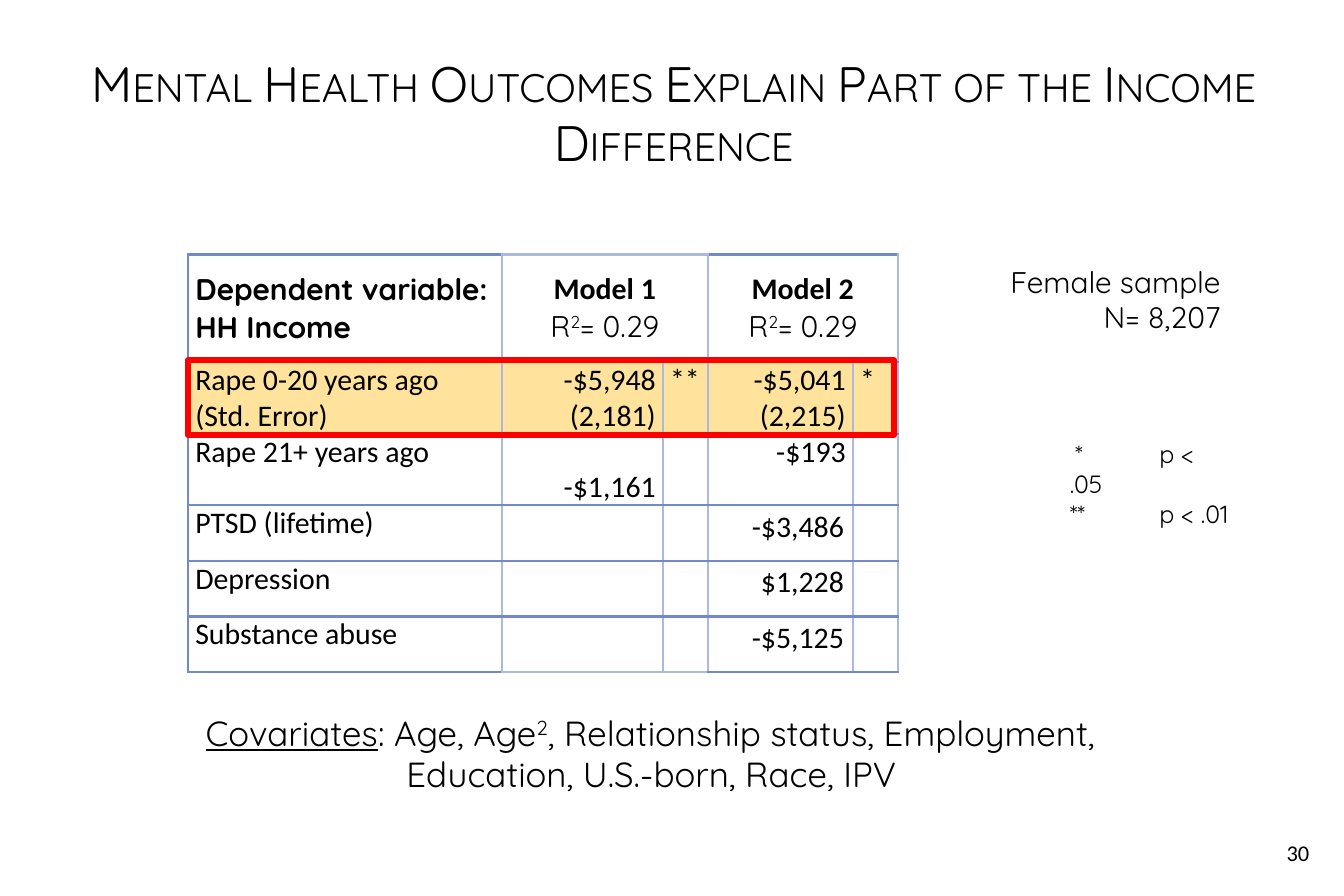
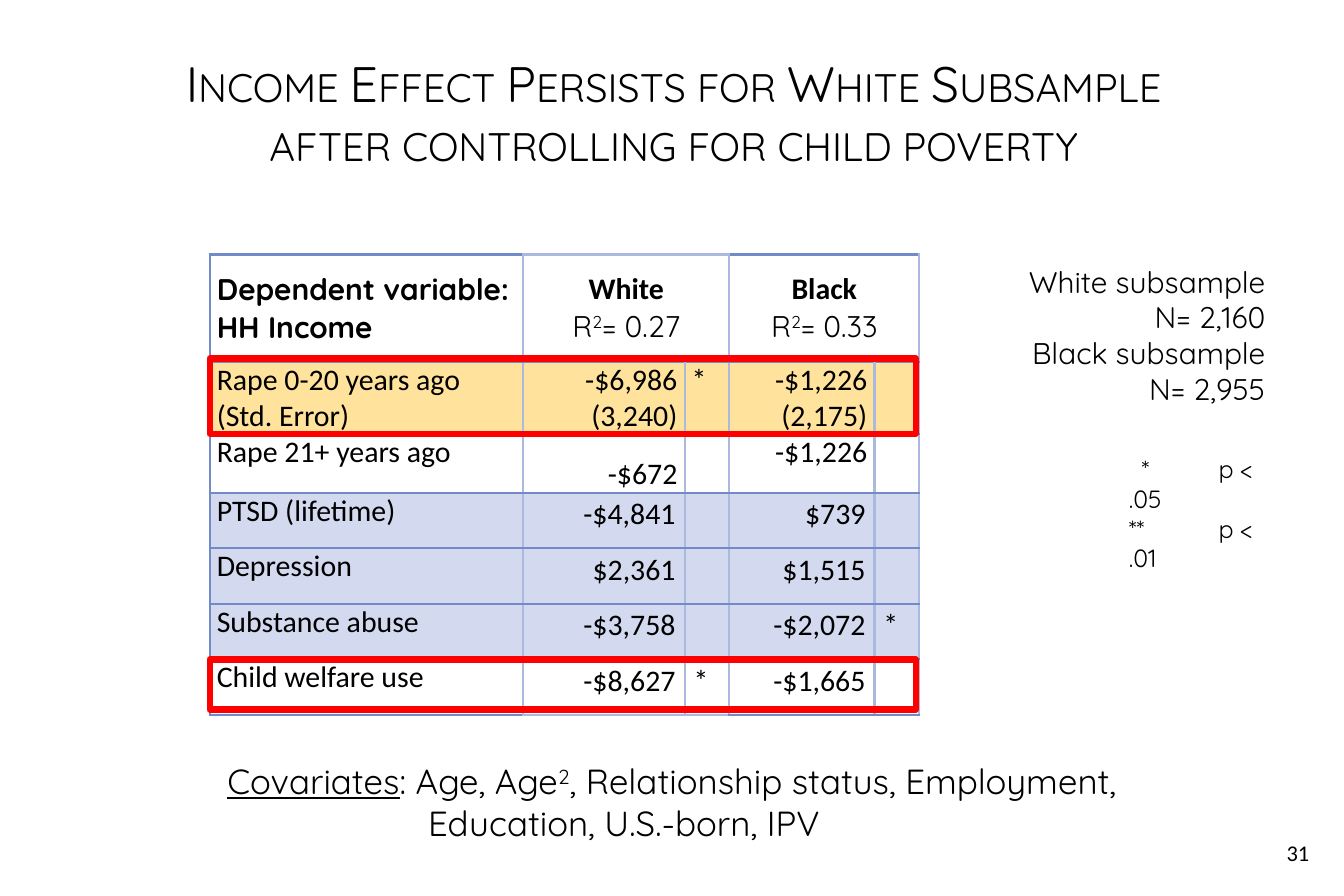
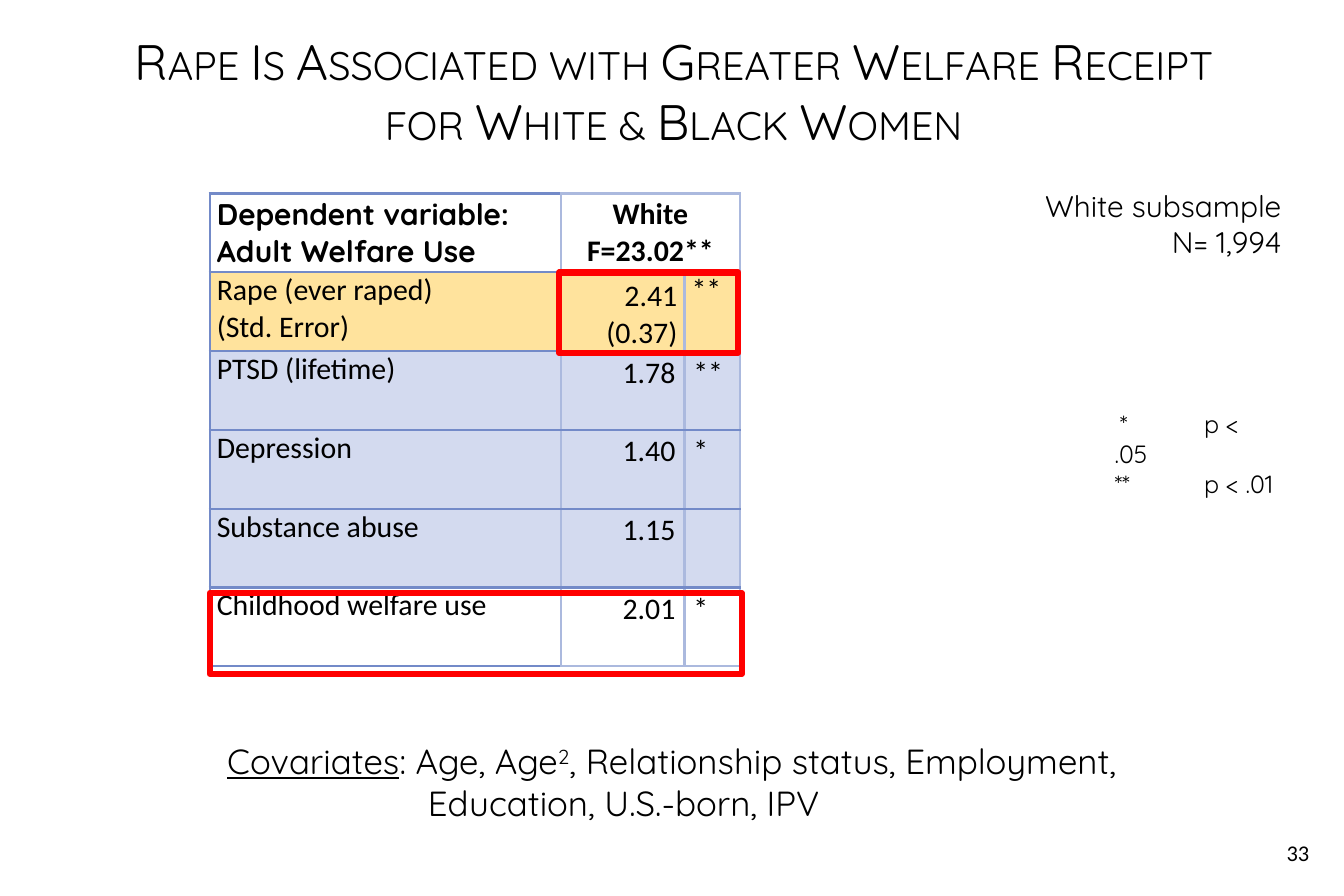
"""Builds three slides of regression tables on income and welfare outcomes."""
from collections.abc import Sequence
from dataclasses import dataclass

from lxml.etree import SubElement
from pptx import Presentation
from pptx.dml.color import RGBColor
from pptx.enum.shapes import MSO_SHAPE
from pptx.enum.text import MSO_ANCHOR, PP_ALIGN
from pptx.oxml.ns import qn
from pptx.util import Inches, Pt

COLORS = {
    "text": "000000",
    "rule": "738AC8",
    "light_rule": "ABB9DE",
    "key": "FFE39D",
    "band": "D3DAEF",
    "frame": "FF0000",
}
BODY, HEAD = "Calibri", "Quicksand"
TIGHT = (0.04, 0, 0.04, 0)
LOOSE = (0.05, 0.02, 0.05, 0.02)
SMALL = (0.05, 0.03, 0.05, 0.03)
WIDE = (0.1, 0.05, 0.1, 0.05)
FIVE_COLS = (1.75, 0.9, 0.25, 0.81, 0.25)
THREE_COLS = (1.96, 0.69, 0.31)
LEGEND = ("*\tp < .05", "**\tp < .01")


@dataclass(frozen=True)
class Run:
    text: str
    bold: bool | None = None
    underline: bool = False
    raised: bool = False
    font: str | None = None


Line = str | tuple[Run, ...]


@dataclass(frozen=True)
class Box:
    left: float
    top: float
    width: float
    height: float

    def emu(self) -> tuple[int, ...]:
        return tuple(Inches(v) for v in (self.left, self.top, self.width, self.height))


@dataclass(frozen=True)
class Row:
    height: float
    label: tuple[str, ...]
    values: tuple[tuple[str, ...], ...]
    fill: str | None = None
    margins: tuple[float, ...] = LOOSE
    low: bool = False


@dataclass(frozen=True)
class Page:
    number: str
    title: str
    title_box: Box
    outcome: str
    models: tuple[tuple[Line, ...], ...]
    table: Box
    cols: tuple[float, ...]
    head_height: float
    rows: tuple[Row, ...]
    frames: tuple[Box, ...]
    covariates: str
    covariates_box: Box
    sample: tuple[str, ...]
    sample_box: Box
    legend_box: Box
    legend_tabs: tuple[tuple[float, float], ...] = ((0.03, 0.19), (0, 0.19))


def rgb(name: str) -> RGBColor:
    return RGBColor.from_string(COLORS[name])


def write(tf, lines: Sequence[Line], *, size: float = 12, font: str = HEAD,
          bold: bool = False, caps: bool = False, align=PP_ALIGN.LEFT,
          hanging: float = 0, tabs: Sequence[tuple[float, float]] = ()) -> None:
    for i, line in enumerate(lines):
        p = tf.paragraphs[0] if i == 0 else tf.add_paragraph()
        p.alignment = align
        pPr = p._p.get_or_add_pPr()
        if hanging:
            pPr.set("marL", str(Inches(hanging)))
            pPr.set("indent", str(-Inches(hanging)))
        if tabs:
            indent, stop = tabs[i]
            pPr.set("marL", "0")
            pPr.set("indent", str(Inches(indent)))
            tab_list = SubElement(pPr, qn("a:tabLst"))
            SubElement(tab_list, qn("a:tab"), pos=str(Inches(stop)), algn="l")
        for run in (Run(line),) if isinstance(line, str) else line:
            for j, part in enumerate(run.text.split("\n")):
                if j:
                    p.add_line_break()
                r = p.add_run()
                r.text = part
                r.font.size = Pt(size)
                r.font.name = run.font or font
                r.font.bold = bold if run.bold is None else run.bold
                r.font.underline = run.underline
                r.font.color.rgb = rgb("text")
                rPr = r._r.get_or_add_rPr()
                if caps:
                    rPr.set("cap", "small")
                if run.raised:
                    rPr.set("baseline", "30000")


def add_text(s, box: Box, lines: Sequence[Line], *, margins: Sequence[float] = SMALL,
             anchor=MSO_ANCHOR.TOP, wrap: bool = True, **style) -> None:
    tf = s.shapes.add_textbox(*box.emu()).text_frame
    tf.word_wrap = wrap
    tf.vertical_anchor = anchor
    tf.margin_left, tf.margin_top, tf.margin_right, tf.margin_bottom = map(Inches, margins)
    write(tf, lines, **style)


def add_frame(s, box: Box) -> None:
    sp = s.shapes.add_shape(MSO_SHAPE.RECTANGLE, *box.emu())
    sp.shadow.inherit = False
    sp.fill.background()
    sp.line.color.rgb = rgb("frame")
    sp.line.width = Pt(2.5)


def set_borders(cell, row: int, col: int, last_row: int) -> None:
    inner = col in (1, 2)
    edges = {
        "L": "light_rule" if col else "rule",
        "R": "light_rule",
        "T": "light_rule" if inner and row == 0 else "rule",
        "B": "light_rule" if inner and row == last_row else "rule",
    }
    tcPr = cell._tc.get_or_add_tcPr()
    for side, color in edges.items():
        ln = SubElement(tcPr, qn(f"a:ln{side}"), w=str(Pt(1)))
        SubElement(SubElement(ln, qn("a:solidFill")), qn("a:srgbClr"), val=COLORS[color])


def fill_cell(cell, lines: Sequence[Line], *, margins: Sequence[float] = TIGHT,
              anchor=MSO_ANCHOR.TOP, **style) -> None:
    (cell.margin_left, cell.margin_top,
     cell.margin_right, cell.margin_bottom) = map(Inches, margins)
    cell.vertical_anchor = anchor
    write(cell.text_frame, lines, **style)


def add_results(s, page: Page) -> None:
    n = len(page.rows)
    table = s.shapes.add_table(n + 1, len(page.cols), *page.table.emu()).table
    table.first_row = table.horz_banding = False
    for column, width in zip(table.columns, page.cols):
        column.width = Inches(width)
    heights = (page.head_height, *(row.height for row in page.rows))
    fills = (None, *(row.fill for row in page.rows))
    for i, (height, fill) in enumerate(zip(heights, fills)):
        table.rows[i].height = Inches(height)
        for j in range(len(page.cols)):
            cell = table.cell(i, j)
            set_borders(cell, i, j, n)
            if fill:
                cell.fill.solid()
                cell.fill.fore_color.rgb = rgb(fill)
            else:
                cell.fill.background()

    fill_cell(table.cell(0, 0), (f"Dependent variable: {page.outcome}",),
              anchor=MSO_ANCHOR.MIDDLE, bold=True)
    for j, lines in enumerate(page.models):
        cell = table.cell(0, 1 + 2 * j)
        cell.merge(table.cell(0, 2 + 2 * j))
        fill_cell(cell, lines, anchor=MSO_ANCHOR.MIDDLE, font=BODY, bold=True,
                  align=PP_ALIGN.CENTER)
    for i, row in enumerate(page.rows, 1):
        fill_cell(table.cell(i, 0), row.label, font=BODY)
        for j, lines in enumerate(row.values, 1):
            low = row.low and j == 1
            fill_cell(table.cell(i, j), lines, font=BODY,
                      margins=row.margins if lines else TIGHT,
                      anchor=MSO_ANCHOR.BOTTOM if low else MSO_ANCHOR.TOP,
                      align=PP_ALIGN.RIGHT if j % 2 else PP_ALIGN.LEFT)


def add_page(prs, page: Page) -> None:
    s = prs.slides.add_slide(prs.slide_layouts[6])
    add_text(s, page.title_box, (page.title,), margins=(0.03,) * 4, size=20, caps=True,
             anchor=MSO_ANCHOR.MIDDLE, align=PP_ALIGN.CENTER)
    add_text(s, Box(7.13, 4.65, 0.25, 0.19), (page.number,), size=9, font=BODY)
    add_results(s, page)
    add_text(s, page.legend_box, LEGEND, size=10, tabs=page.legend_tabs)
    for box in page.frames:
        add_frame(s, box)
    covariates = (Run("Covariates", underline=True), Run(": Age, Age"),
                  Run("2", raised=True), Run(page.covariates))
    add_text(s, page.covariates_box, (covariates,), margins=WIDE, size=14, hanging=1.12)
    add_text(s, page.sample_box, page.sample, margins=WIDE, align=PP_ALIGN.RIGHT)


def model(name: str, fit: str) -> tuple[Line, ...]:
    runs = (("R", False), ("2", True), (f"= {fit}", False))
    return name, tuple(Run(t, bold=False, raised=up, font=HEAD) for t, up in runs)


TITLE_BOX = Box(0.33, 0.25, 6.86, 0.75)
RAPE_EARLY = ("Rape 0-20 years ago", "(Std. Error)")
RAPE_LATE = ("Rape 21+ years ago",)
PTSD, DEPRESSION, SUBSTANCE = ("PTSD (lifetime)",), ("Depression",), ("Substance abuse",)
COVARIATES = ", Relationship status, Employment, Education, U.S.-born, IPV"

PAGES = (
    Page(
        number="30",
        title="Mental Health Outcomes Explain Part of the Income Difference",
        title_box=TITLE_BOX,
        outcome="HH Income",
        models=(model("Model 1", "0.29"), model("Model 2", "0.29")),
        table=Box(1.05, 1.42, 3.95, 2.32),
        cols=FIVE_COLS,
        head_height=0.6,
        rows=(
            Row(0.4, RAPE_EARLY, (("-$5,948", "(2,181)"), ("**",),
                                  ("-$5,041", "(2,215)"), ("*",)), "key", TIGHT),
            Row(0.4, RAPE_LATE, (("-$1,161",), (), ("-$193",), ()), None, TIGHT, low=True),
            Row(0.31, PTSD, ((), (), ("-$3,486",), ())),
            Row(0.31, DEPRESSION, ((), (), ("$1,228",), ())),
            Row(0.31, SUBSTANCE, ((), (), ("-$5,125",), ())),
        ),
        frames=(Box(1.05, 2.01, 3.94, 0.42),),
        covariates=COVARIATES.replace("IPV", "Race, IPV"),
        covariates_box=Box(1.05, 3.92, 5.87, 0.57),
        sample=("Female sample", "N= 8,207"),
        sample_box=Box(5.33, 1.42, 1.58, 0.5),
        legend_box=Box(5.92, 2.42, 1, 0.56),
    ),
    Page(
        number="31",
        title="Income Effect Persists for White Subsample\nafter controlling for child poverty",
        title_box=TITLE_BOX,
        outcome="HH Income",
        models=(model("White", "0.27"), model("Black", "0.33")),
        table=Box(1.17, 1.42, 3.95, 2.56),
        cols=FIVE_COLS,
        head_height=0.6,
        rows=(
            Row(0.4, RAPE_EARLY, (("-$6,986", "(3,240)"), ("*",),
                                  ("-$1,226", "(2,175)"), ()), "key", TIGHT),
            Row(0.33, RAPE_LATE, (("-$672",), (), ("-$1,226",), ()), None, TIGHT, low=True),
            Row(0.31, PTSD, (("-$4,841",), (), ("$739",), ()), "band"),
            Row(0.31, DEPRESSION, (("$2,361",), (), ("$1,515",), ()), "band"),
            Row(0.31, SUBSTANCE, (("-$3,758",), (), ("-$2,072",), ("*",)), "band"),
            Row(0.31, ("Child welfare use",), (("-$8,627",), ("*",), ("-$1,665",), ())),
        ),
        frames=(Box(1.17, 2, 3.94, 0.42), Box(1.17, 3.68, 3.94, 0.28)),
        covariates=COVARIATES,
        covariates_box=Box(1.17, 4.19, 5.58, 0.57),
        sample=("White subsample", "N= 2,160", "Black subsample", "N= 2,955"),
        sample_box=Box(5.58, 1.42, 1.58, 0.91),
        legend_box=Box(6.25, 2.5, 0.92, 0.56),
        legend_tabs=((0.07, 0.23), (0, 0.16)),
    ),
    Page(
        number="33",
        title="Rape Is Associated with Greater Welfare Receipt\nfor White & Black Women",
        title_box=Box(0.33, 0.17, 6.86, 0.67),
        outcome="Adult Welfare Use",
        models=(("White", "F=23.02**"),),
        table=Box(1.17, 1.08, 2.96, 2.67),
        cols=THREE_COLS,
        head_height=0.44,
        rows=(
            Row(0.44, ("Rape (ever raped)", "(Std. Error)"),
                (("2.41", "(0.37)"), ("**",)), "key", TIGHT, low=True),
            Row(0.44, PTSD, (("1.78",), ("**",)), "band"),
            Row(0.44, DEPRESSION, (("1.40",), ("*",)), "band"),
            Row(0.44, SUBSTANCE, (("1.15",), ()), "band"),
            Row(0.44, ("Childhood welfare use",), (("2.01",), ("*",))),
        ),
        frames=(Box(3.12, 1.52, 1, 0.45), Box(1.17, 3.31, 2.97, 0.45)),
        covariates=COVARIATES,
        covariates_box=Box(1.17, 4.08, 5.17, 0.57),
        sample=("White subsample", "N= 1,994"),
        sample_box=Box(5.67, 1, 1.58, 0.5),
        legend_box=Box(6.17, 2.25, 1, 0.56),
    ),
)


def main() -> None:
    prs = Presentation()
    prs.slide_width, prs.slide_height = Inches(7.5), Inches(5)
    for page in PAGES:
        add_page(prs, page)
    prs.save("out.pptx")


if __name__ == "__main__":
    main()
